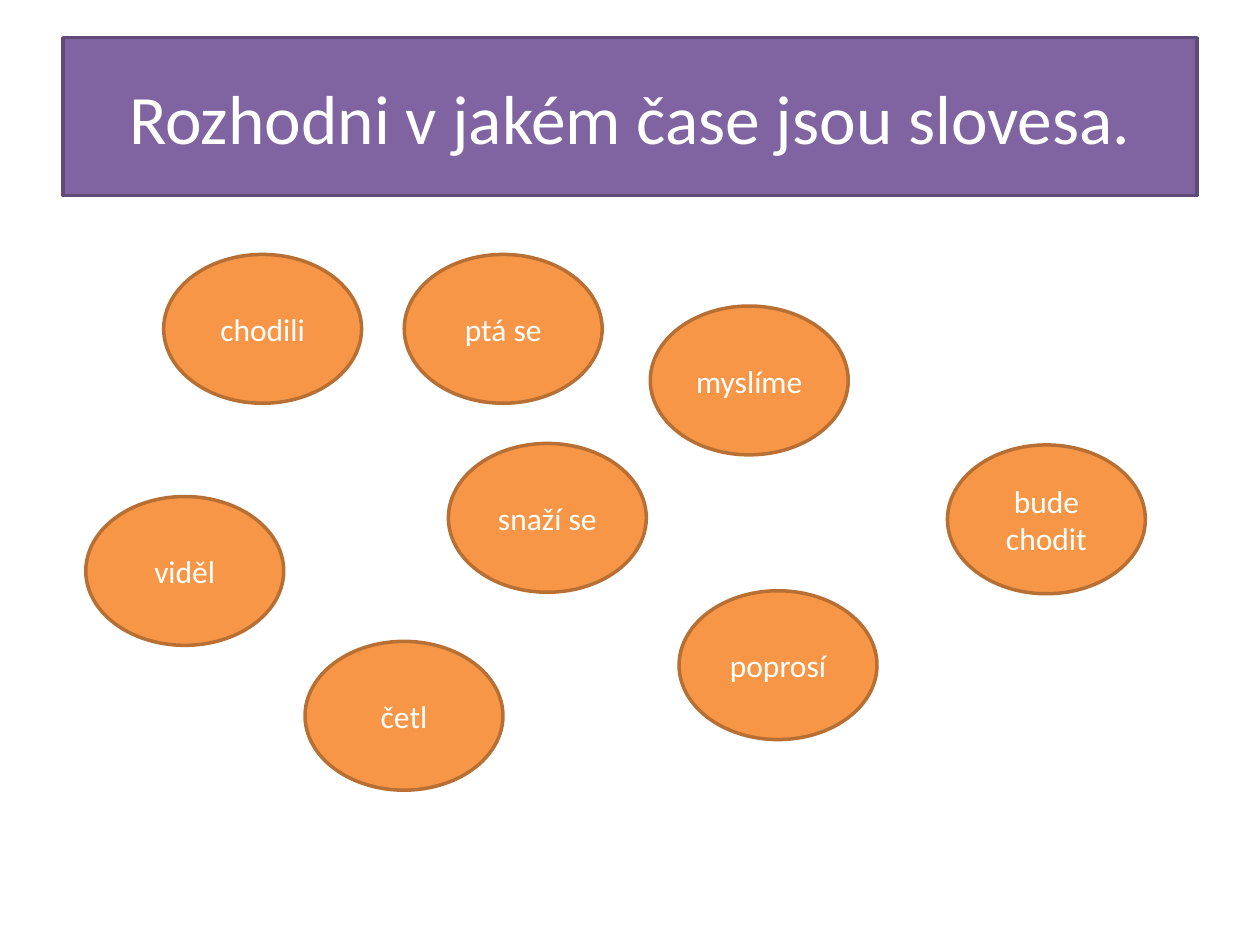
"""Build a slide asking pupils to decide the tense of scattered verbs."""
from pptx import Presentation
from pptx.dml.color import RGBColor
from pptx.enum.shapes import MSO_SHAPE
from pptx.enum.text import MSO_ANCHOR, MSO_AUTO_SIZE, PP_ALIGN
from pptx.util import Cm, Pt

OVAL = MSO_SHAPE.OVAL
MIDDLE = MSO_ANCHOR.MIDDLE
CENTER = PP_ALIGN.CENTER
FIXED = MSO_AUTO_SIZE.NONE

WHITE = RGBColor(0xFF, 0xFF, 0xFF)
PURPLE = RGBColor(0x80, 0x64, 0xA2)
DARK_PURPLE = RGBColor(0x5F, 0x4A, 0x78)
ORANGE = RGBColor(0xF7, 0x96, 0x46)
DARK_ORANGE = RGBColor(0xB7, 0x6F, 0x34)

VERBS = [
    ("chodili", 3.3, 5.13),
    ("ptá se", 8.15, 5.13),
    ("bude chodit", 19.1, 8.97),
    ("viděl", 1.73, 10.01),
    ("snaží se", 9.04, 8.94),
    ("četl", 6.15, 12.93),
    ("poprosí", 13.69, 11.91),
    ("myslíme", 13.11, 6.17),
]


class VerbPage:
    font = "Calibri"
    oval_width, oval_height = Cm(3.99), Cm(3)

    def __init__(self, deck):
        self.page = deck.slides.add_slide(deck.slide_layouts[5])

    def style(self, box, text, size, fill, line):
        box.fill.solid()
        box.fill.fore_color.rgb = fill
        box.line.color.rgb = line
        box.line.width = Pt(2)
        frame = box.text_frame
        frame.text = text
        frame.word_wrap = True
        frame.auto_size = FIXED
        frame.vertical_anchor = MIDDLE
        para = frame.paragraphs[0]
        para.alignment = CENTER
        para.font.name = self.font
        para.font.size = Pt(size)
        para.font.color.rgb = WHITE

    def title(self, text):
        box = self.page.shapes.title
        box.left, box.top = Cm(1.27), Cm(0.76)
        box.width, box.height = Cm(22.86), Cm(3.18)
        self.style(box, text, 39.6, PURPLE, DARK_PURPLE)

    def verb(self, text, left, top):
        box = self.page.shapes.add_shape(
            OVAL, Cm(left), Cm(top), self.oval_width, self.oval_height)
        box.shadow.inherit = False
        self.style(box, text, 18, ORANGE, DARK_ORANGE)


def main():
    deck = Presentation()
    deck.slide_width, deck.slide_height = Cm(25.4), Cm(19.05)
    page = VerbPage(deck)
    page.title("Rozhodni v jakém čase jsou slovesa.")
    for text, left, top in VERBS:
        page.verb(text, left, top)
    deck.save("out.pptx")


if __name__ == "__main__":
    main()
